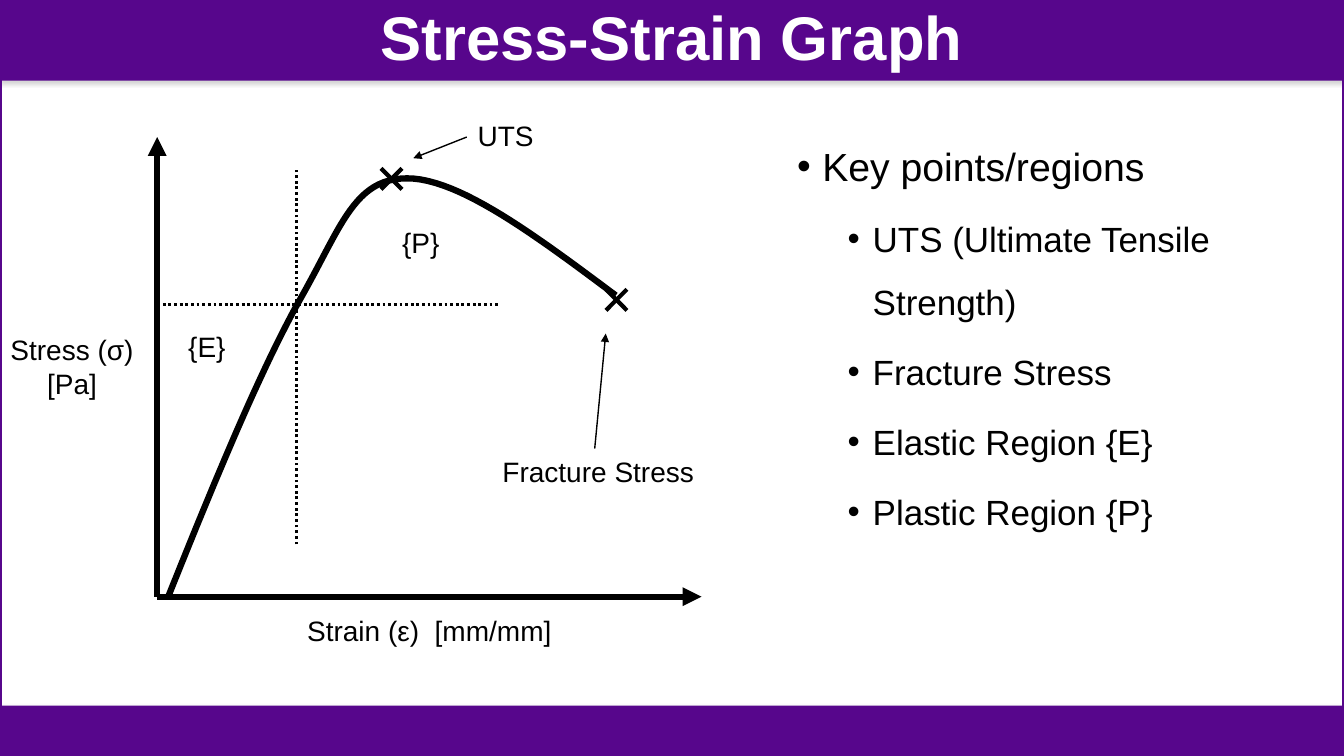
from lxml.etree import SubElement
from pptx import Presentation
from pptx.dml.color import RGBColor
from pptx.enum.dml import MSO_LINE as Dash
from pptx.enum.shapes import MSO_CONNECTOR as Link, MSO_SHAPE as Form
from pptx.enum.text import MSO_ANCHOR as Anchor, PP_ALIGN as Align
from pptx.oxml.ns import qn
from pptx.util import Pt

# Content, lengths in points
WIDE, HIGH = 960, 540
PURPLE, BLACK, WHITE, GREY = "57068C", "000000", "FFFFFF", "808080"
FONT = "Arial"
TITLE = "Stress-Strain Graph"
BAR = (0, 0, WIDE, 57.6)
FRAME = (0, 0, WIDE, HIGH)
FOOT = (0, 504, WIDE, 36)

LABELS = [  # text, box, alignment
    ("Strain (ε)  [mm/mm]", (175, 434.9, 263.5, 31.7), Align.CENTER),
    ("Stress (σ) [Pa]", (0, 234, 103, 55.4), Align.CENTER),
    ("Fracture Stress", (337, 321.1, 180.7, 31.7), Align.CENTER),
    ("UTS", (334.1, 81.4, 55.4, 31.7), Align.LEFT),
    ("{P}", (280.1, 157.7, 52.6, 38.9), Align.LEFT),
    ("{E}", (127.4, 231.8, 52.6, 38.9), Align.LEFT),
]
ORIGIN = (112.3, 426.2)
START = (120.2, 426.2)
CURVE = [  # two control points and an end point each
    ((153.4, 343.4), (187.2, 261.4), (216, 211)),
    ((244, 161.3), (253.4, 127.4), (290.9, 127.4)),
    ((328.3, 127.4), (383.8, 169.2), (439.9, 211)),
]
STEPS = 24
AXES = [(ORIGIN, (501.1, 426.2)), (ORIGIN, (112.3, 97.9))]
GUIDES = [((112.3, 217.4), (356.4, 217.4)), ((211.7, 388.8), (211.7, 120.2))]
CROSSES = [(279.7, 127.8), (440.3, 214.2)]
ARM = 7.5
ARROWS = [((424.8, 320.4), (432.7, 238.3)), ((333.4, 97.9), (295.2, 113))]

LIST_BOX = (562.3, 81.4, 360.7, 356.4)
POINTS = [  # level, text
    (0, "Key points/regions"),
    (1, "UTS (Ultimate Tensile Strength)"),
    (1, "Fracture Stress"),
    (1, "Elastic Region {E}"),
    (1, "Plastic Region {P}"),
]
LEVELS = [(18, 28), (54, 25)]  # margin, size
HANG = 18


def color(code):
    return RGBColor.from_string(code)


def place(box):
    return [Pt(v) for v in box]


def style(font, size, code=BLACK, bold=False):
    font.name, font.size, font.bold = FONT, Pt(size), bold
    font.color.rgb = color(code)


def stroke(line, width, code=BLACK):
    line.color.rgb = color(code)
    line.width = Pt(width)


def rect(box, fill=None, edge=None):
    shape = shapes.add_shape(Form.RECTANGLE, *place(box))
    shape.shadow.inherit = False
    if fill:
        shape.fill.solid()
        shape.fill.fore_color.rgb = color(fill)
        shape.line.fill.background()
        # Soft shadow below the bar
        glow = SubElement(shape._element.spPr.find(qn("a:effectLst")), qn("a:outerShdw"),
                          blurRad=str(Pt(3.1)), dist=str(Pt(1.8)), dir="5400000", rotWithShape="0")
        tint = SubElement(glow, qn("a:srgbClr"), val=GREY)
        SubElement(tint, qn("a:alpha"), val="35000")
    else:
        shape.fill.background()
        stroke(shape.line, *edge)
    return shape


def draw(start, end, width, dash=None, head=False):
    link = shapes.add_connector(Link.STRAIGHT, *place(start + end))
    stroke(link.line, width)
    if dash:
        link.line.dash_style = dash
    if head:
        SubElement(link.line._get_or_add_ln(), qn("a:tailEnd"), type="triangle")
    SubElement(link._element.spPr, qn("a:effectLst"))


def bezier(a, b, c, d, t):
    s = 1 - t
    return tuple(Pt(s**3 * w + 3 * s * s * t * x + 3 * s * t * t * y + t**3 * z)
                 for w, x, y, z in zip(a, b, c, d))


deck = Presentation()
deck.slide_width, deck.slide_height = Pt(WIDE), Pt(HIGH)
slide = deck.slides.add_slide(deck.slide_layouts[5])
shapes = slide.shapes

# Bars and frame
rect(BAR, PURPLE)
rect(FRAME, edge=(2.25, PURPLE))
rect(FOOT, PURPLE)

# Title, brought in front of its bar
title = shapes.title
title.left, title.top, title.width, title.height = place(BAR)
shapes._spTree.append(title._element)
frame = title.text_frame
frame.text = TITLE
frame.vertical_anchor = Anchor.MIDDLE
para = frame.paragraphs[0]
para.alignment, para.line_spacing = Align.CENTER, 0.9
style(para.runs[0].font, 44, WHITE, True)

# Curve
trace = [bezier(a, b, c, d, n / STEPS)
         for a, (b, c, d) in zip([START] + [part[2] for part in CURVE], CURVE)
         for n in range(1, STEPS + 1)]
path = shapes.build_freeform(*place(START))
path.add_line_segments(trace, close=False)
curve = path.convert_to_shape()
curve.shadow.inherit = False
curve.fill.background()
stroke(curve.line, 4.5)

# Axes, guides, crosses and arrows
for start, end in AXES:
    draw(start, end, 4.5, head=True)
for start, end in GUIDES:
    draw(start, end, 2, dash=Dash.ROUND_DOT)
for x, y in CROSSES:
    for rise in (ARM, -ARM):
        draw((x - ARM, y - rise), (x + ARM, y + rise), 3)
for start, end in ARROWS:
    draw(start, end, 1, head=True)

# Labels
for text, box, align in LABELS:
    label = shapes.add_textbox(*place(box))
    frame = label.text_frame
    frame.word_wrap = True
    frame.text = text
    frame.paragraphs[0].alignment = align
    style(frame.paragraphs[0].runs[0].font, 20)

# Key points
frame = shapes.add_textbox(*place(LIST_BOX)).text_frame
frame.word_wrap = True
for n, (level, text) in enumerate(POINTS):
    para = frame.add_paragraph() if n else frame.paragraphs[0]
    para.text, para.level, para.line_spacing = text, level, 1.5
    para.space_before = Pt(5 if n else 0)
    margin, size = LEVELS[level]
    props = para._p.get_or_add_pPr()
    props.set("marL", str(Pt(margin)))
    props.set("indent", str(-Pt(HANG)))
    SubElement(props, qn("a:buFont"), typeface=FONT)
    SubElement(props, qn("a:buChar"), char="•")
    style(para.runs[0].font, size)

deck.save("out.pptx")
